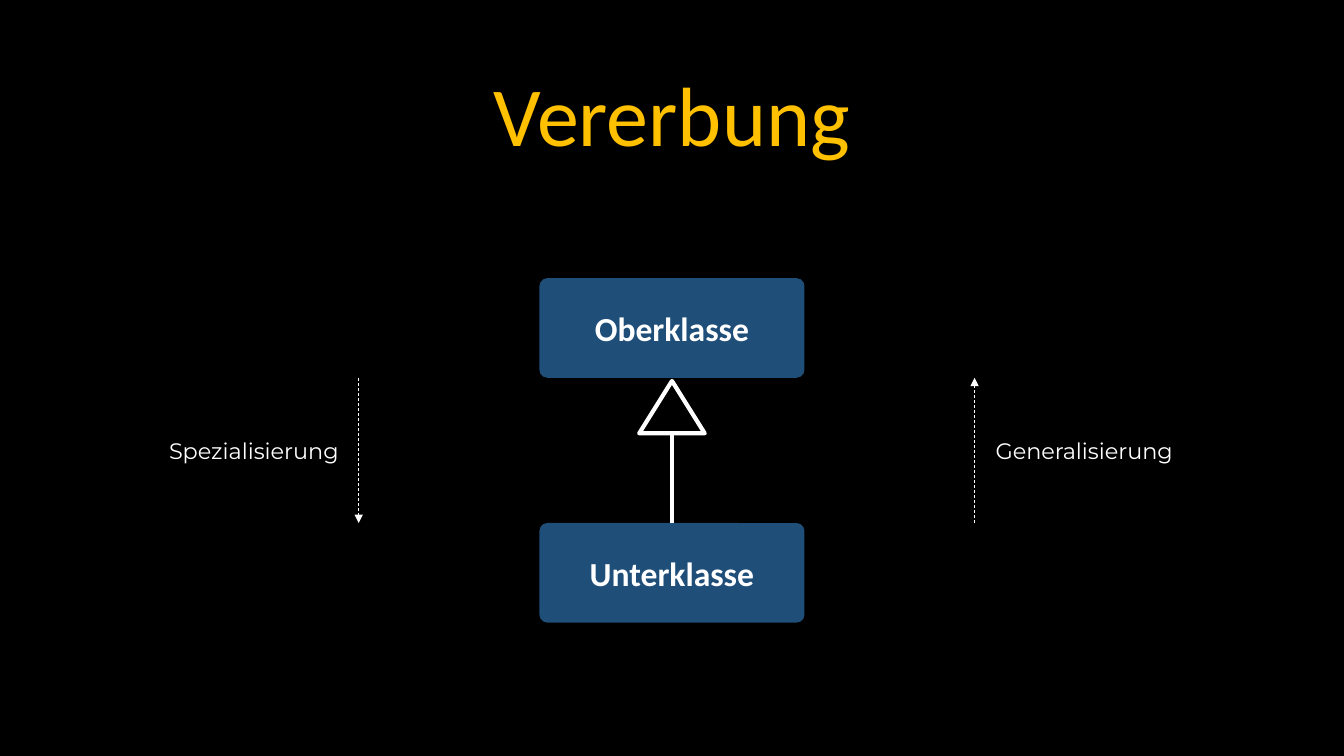
"""Builds a slide on class inheritance."""
from lxml import etree
from pptx import Presentation
from pptx.dml.color import RGBColor
from pptx.enum.dml import MSO_LINE
from pptx.enum.shapes import MSO_CONNECTOR, MSO_SHAPE
from pptx.enum.text import MSO_ANCHOR, MSO_AUTO_SIZE, PP_ALIGN
from pptx.oxml.ns import qn
from pptx.util import Cm, Pt

BLACK = RGBColor(0x00, 0x00, 0x00)
WHITE = RGBColor(0xFF, 0xFF, 0xFF)
GOLD = RGBColor(0xFF, 0xC0, 0x00)
BLUE = RGBColor(0x1F, 0x4E, 0x79)
ROUNDED = MSO_SHAPE.ROUNDED_RECTANGLE
TRIANGLE = MSO_SHAPE.ISOSCELES_TRIANGLE
STRAIGHT = MSO_CONNECTOR.STRAIGHT
DASH = MSO_LINE.DASH
MIDDLE = MSO_ANCHOR.MIDDLE
CENTER = PP_ALIGN.CENTER
LEFT = PP_ALIGN.LEFT
GROW = MSO_AUTO_SIZE.SHAPE_TO_FIT_TEXT

SLIDE_WIDTH, SLIDE_HEIGHT = 33.87, 19.05
MIDLINE = SLIDE_WIDTH / 2
CLASS_WIDTH, CLASS_HEIGHT = 6.68, 2.51
SUPERCLASS_TOP, SUBCLASS_TOP = 7.01, 13.18
GAP_TOP = SUPERCLASS_TOP + CLASS_HEIGHT
HEAD_TOP, HEAD_WIDTH, HEAD_HEIGHT = 9.6, 1.65, 1.32


class InheritanceSlide:
    """Holds the style and the current slide."""

    heading_font = "Calibri"
    label_font = "Montserrat"

    def __init__(self, deck):
        self.slide = deck.slides.add_slide(deck.slide_layouts[5])
        background = self.slide.background.fill
        background.solid()
        background.fore_color.rgb = BLACK

    def set_text(self, frame, wording, font, size, color=WHITE, bold=False, align=CENTER):
        frame.text = wording
        frame.word_wrap = True
        paragraph = frame.paragraphs[0]
        paragraph.alignment = align
        style = paragraph.runs[0].font
        style.name, style.size, style.bold = font, Pt(size), bold
        style.color.rgb = color

    def title(self, wording):
        heading = self.slide.shapes.title
        heading.left, heading.top = Cm(0.38), Cm(0.28)
        heading.width, heading.height = Cm(33.1), Cm(5.44)
        frame = heading.text_frame
        self.set_text(frame, wording, self.heading_font, 60, GOLD)
        frame.vertical_anchor = MIDDLE
        frame.paragraphs[0].line_spacing = 0.9

    def class_box(self, wording, top):
        box = self.slide.shapes.add_shape(
            ROUNDED, Cm(MIDLINE - CLASS_WIDTH / 2), Cm(top), Cm(CLASS_WIDTH), Cm(CLASS_HEIGHT))
        box.adjustments[0] = 0.08
        box.shadow.inherit = False
        box.fill.solid()
        box.fill.fore_color.rgb = BLUE
        box.line.fill.background()
        box.text_frame.vertical_anchor = MIDDLE
        self.set_text(box.text_frame, wording, self.heading_font, 24, bold=True)

    def label(self, wording, left, width):
        caption = self.slide.shapes.add_textbox(Cm(left), Cm(10.9), Cm(width), Cm(0.94))
        self.set_text(caption.text_frame, wording, self.label_font, 16, align=LEFT)
        caption.text_frame.auto_size = GROW

    def line(self, x, start, end, weight):
        stroke = self.slide.shapes.add_connector(STRAIGHT, Cm(x), Cm(start), Cm(x), Cm(end))
        stroke.line.color.rgb = WHITE
        stroke.line.width = Pt(weight)
        etree.SubElement(stroke.element.spPr, qn("a:effectLst"))
        return stroke

    def dashed_arrow(self, x, start, end):
        arrow = self.line(x, start, end, 0.5)
        arrow.line.dash_style = DASH
        outline = arrow.element.spPr.find(qn("a:ln"))
        etree.SubElement(outline, qn("a:tailEnd"), type="triangle")

    def inheritance_head(self):
        head = self.slide.shapes.add_shape(
            TRIANGLE, Cm(MIDLINE - HEAD_WIDTH / 2), Cm(HEAD_TOP), Cm(HEAD_WIDTH), Cm(HEAD_HEIGHT))
        head.shadow.inherit = False
        head.fill.background()
        head.line.color.rgb = WHITE
        head.line.width = Pt(3)


def main():
    deck = Presentation()
    deck.slide_width, deck.slide_height = Cm(SLIDE_WIDTH), Cm(SLIDE_HEIGHT)
    inheritance = InheritanceSlide(deck)
    inheritance.title("Vererbung")
    inheritance.class_box("Oberklasse", SUPERCLASS_TOP)
    inheritance.class_box("Unterklasse", SUBCLASS_TOP)
    inheritance.dashed_arrow(9.04, GAP_TOP, SUBCLASS_TOP)
    inheritance.label("Spezialisierung", 4.01, 4.85)
    inheritance.dashed_arrow(24.56, SUBCLASS_TOP, GAP_TOP)
    inheritance.label("Generalisierung", 24.84, 5.51)
    inheritance.inheritance_head()
    inheritance.line(MIDLINE, HEAD_TOP + HEAD_HEIGHT, SUBCLASS_TOP, 3)
    deck.save("out.pptx")


if __name__ == "__main__":
    main()
